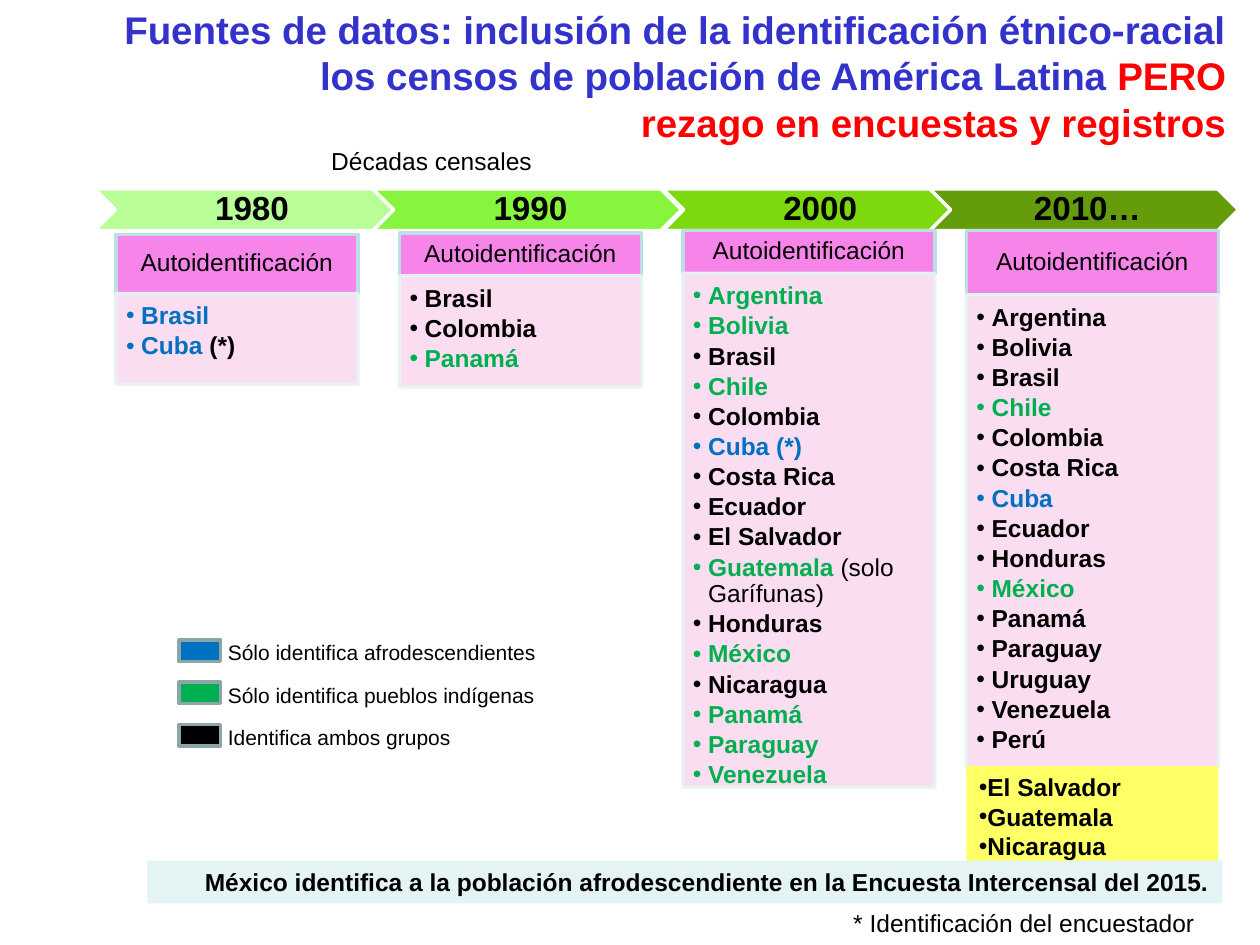
from lxml.etree import SubElement
from pptx import Presentation
from pptx.dml.color import RGBColor
from pptx.enum.shapes import MSO_SHAPE as Shape
from pptx.enum.text import MSO_ANCHOR as Anchor, PP_ALIGN as Align
from pptx.oxml.ns import qn
from pptx.util import Inches, Pt

BLACK = RGBColor(0, 0, 0)
WHITE = RGBColor(255, 255, 255)
RED = RGBColor(255, 0, 0)
NAVY = RGBColor(0x33, 0x33, 0xCC)
AFRO = RGBColor(0x00, 0x70, 0xC0)
INDIG = RGBColor(0x00, 0xB0, 0x50)
BOTH = BLACK
PINK = RGBColor(0xF7, 0x85, 0xE9)
ROSE = RGBColor(0xFA, 0xDA, 0xEF)
EDGE = RGBColor(0xBB, 0xE0, 0xE3)
PALE = RGBColor(0xE7, 0xF3, 0xF4)
YELLOW = RGBColor(0xFF, 0xFF, 0x66)
MINT = RGBColor(0xE4, 0xF3, 0xF4)
GRAY = RGBColor(0x8A, 0xA6, 0xA8)

# Content: a paragraph is a list of runs (text, colour, bold)
TITLE = ("Fuentes de datos: inclusión de la identificación étnico-racial "
         "los censos de población de América Latina ")
ALERT = ["PERO", "rezago en encuestas y registros"]
HEAD = "Autoidentificación"


def names(color, *items):
    return [[(item, color, True)] for item in items]


# year, chevron left, chevron colour, panel top, head height, list height, width, countries
DECADES = [
    ("1980", 0.75, RGBColor(0xB8, 0xFD, 0x95), 1.86, 0.47, 0.72, 1.92,
     names(AFRO, "Brasil") + [[("Cuba ", AFRO, True), ("(*)", BLACK, True)]]),
    ("1990", 2.96, RGBColor(0x87, 0xF5, 0x3D), 1.85, 0.34, 0.88, 1.92,
     names(BOTH, "Brasil", "Colombia") + names(INDIG, "Panamá")),
    ("2000", 5.26, RGBColor(0x7D, 0xD9, 0x0D), 1.83, 0.34, 4.08, 2,
     names(INDIG, "Argentina", "Bolivia") + names(BOTH, "Brasil")
     + names(INDIG, "Chile") + names(BOTH, "Colombia") + names(AFRO, "Cuba (*)")
     + names(BOTH, "Costa Rica", "Ecuador", "El Salvador")
     + [[("Guatemala ", INDIG, True), ("(solo Garífunas)", BLACK, False)]]
     + names(BOTH, "Honduras") + names(INDIG, "México") + names(BOTH, "Nicaragua")
     + names(INDIG, "Panamá", "Paraguay", "Venezuela")),
    ("2010…", 7.38, RGBColor(0x65, 0x9C, 0x0C), 1.83, 0.51, 3.75, 2,
     names(BOTH, "Argentina", "Bolivia", "Brasil") + names(INDIG, "Chile")
     + names(BOTH, "Colombia", "Costa Rica") + names(AFRO, "Cuba")
     + names(BOTH, "Ecuador", "Honduras") + names(INDIG, "México")
     + names(BOTH, "Panamá", "Paraguay", "Uruguay", "Venezuela", "Perú")),
]
LATER = names(BOTH, "El Salvador", "Guatemala", "Nicaragua")
LEGEND = [(AFRO, "Sólo identifica afrodescendientes"),
          (INDIG, "Sólo identifica pueblos indígenas"),
          (BOTH, "Identifica ambos grupos")]
NOTE = "México identifica a la población afrodescendiente en la Encuesta Intercensal del 2015."

LEFT, STEP = 0.92, 2.25       # decade columns
KEYTOP, KEYSTEP = 5.08, 0.335  # legend rows

deck = Presentation()
deck.slide_width, deck.slide_height = Inches(10), Inches(7.5)
slide = deck.slides.add_slide(deck.slide_layouts[6])


def fade(fill):
    """Make a solid fill 90 % opaque."""
    color = fill._xPr.find(qn("a:solidFill"))[0]
    SubElement(color, qn("a:alpha"), val="90000")


def block(kind, at, fill, edge=None, clear=False):
    shape = slide.shapes.add_shape(kind, *map(Inches, at))
    shape.shadow.inherit = False
    shape.fill.solid()
    shape.fill.fore_color.rgb = fill
    if edge is None:
        shape.line.fill.background()
    else:
        shape.line.color.rgb = edge
        shape.line.width = Pt(2)
    if clear:
        fade(shape.fill)
        fade(shape.line.fill)
    return shape


def label(at):
    return slide.shapes.add_textbox(*map(Inches, at))


def write(shape, paras, size=14, align=Align.LEFT, anchor=Anchor.TOP,
          inset=(0.1, 0.05, 0.1, 0.05), hang=0, lead=None, after=0):
    frame = shape.text_frame
    frame.word_wrap = True
    frame.vertical_anchor = anchor
    (frame.margin_left, frame.margin_top,
     frame.margin_right, frame.margin_bottom) = map(Inches, inset)
    for i, runs in enumerate(paras):
        para = frame.add_paragraph() if i else frame.paragraphs[0]
        para.alignment = align
        para.line_spacing = lead
        para.space_after = Pt(after)
        if hang:
            props = para._p.get_or_add_pPr()
            props.set("marL", str(Inches(hang)))
            props.set("indent", str(-Inches(hang)))
            SubElement(props, qn("a:buFont"), typeface="Arial")
            SubElement(props, qn("a:buChar"), char="•")
        para.font.size, para.font.name = Pt(size), "Arial"
        for j, (text, color, bold) in enumerate(runs):
            run = para.add_run()
            run.text = text
            run.font.color.rgb = color
            run.font.bold = bold


# Title
title = label((0.83, 0, 9, 1.08))
write(title, [[(TITLE, NAVY, True), (ALERT[0], RED, True)]], 22, Align.RIGHT)
para = title.text_frame.paragraphs[0]
para.add_line_break()
last = para.add_run()
last.text = ALERT[1]
last.font.bold = True
last.font.color.rgb = RED
write(label((2.53, 1.11, 2.75, 0.34)), [[("Décadas censales", BLACK, False)]])

# Timeline
for year, left, color, *_ in DECADES:
    arrow = block(Shape.CHEVRON, (left, 1.5, 2.45, 0.33), color, WHITE)
    write(arrow, [[(year, BLACK, True)]], 19, Align.CENTER, Anchor.MIDDLE,
          (0.08, 0.03, 0.03, 0.03), lead=0.9)

# Country panels
for i, (_, _, _, top, head, high, wide, lands) in enumerate(DECADES):
    left = LEFT + i * STEP
    bar = block(Shape.RECTANGLE, (left, top, wide, head), PINK, EDGE)
    write(bar, [[(HEAD, BLACK, False)]], 14, Align.CENTER, Anchor.MIDDLE,
          (0.11, 0.06, 0.11, 0.06), lead=0.9)
    body = block(Shape.RECTANGLE, (left, top + head, wide, high), ROSE, PALE, True)
    write(body, lands, inset=(0.08, 0.08, 0.11, 0.12), hang=0.12, lead=0.9, after=2.1)

# Later censuses and notes
write(block(Shape.RECTANGLE, (LEFT + 3 * STEP, 6.08, 2, 0.81), YELLOW), LATER, hang=0.06)
write(block(Shape.RECTANGLE, (1.17, 6.83, 8.53, 0.34), MINT),
      [[(NOTE, BLACK, True)]], align=Align.RIGHT)
write(label((4.83, 7.16, 4.75, 0.34)),
      [[("* Identificación del encuestador", BLACK, False)]], align=Align.RIGHT)

# Legend
for i, (color, text) in enumerate(LEGEND):
    top = KEYTOP + i * KEYSTEP
    block(Shape.RECTANGLE, (1.42, top, 0.33, 0.17), color, GRAY)
    write(label((1.71, top - 0.05, 2.96, 0.3)), [[(text, BLACK, False)]], 12)

deck.save("out.pptx")
